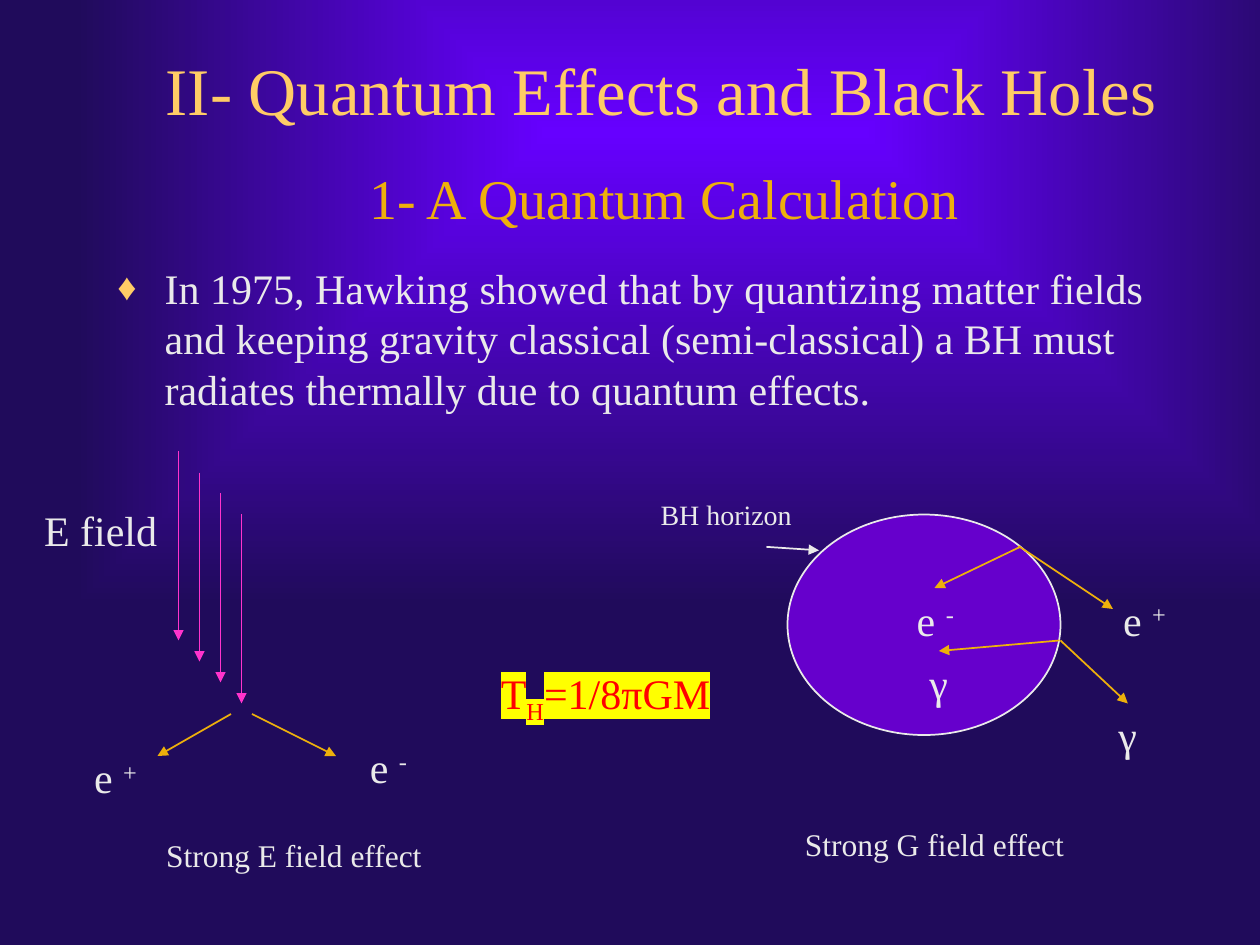
from pptx import Presentation
from pptx.dml.color import RGBColor as Rgb
from pptx.enum.shapes import MSO_CONNECTOR as Connector, MSO_SHAPE as Preset
from pptx.enum.text import MSO_ANCHOR as Anchor, MSO_AUTO_SIZE as AutoSize, PP_ALIGN as Align
from pptx.oxml import parse_xml
from pptx.oxml.ns import nsdecls
from pptx.util import Pt

THEME = {
    "font": "Times New Roman",
    "text": "EAEAEA", "title": "FFCC66", "accent": "EEB00B", "field": "FF33CC",
    "hole": "6600CC", "formula": "FF0000", "marker": "FFFF00",
    "glow": "6600FF", "night": "200B5B",
    "title_size": 38, "subtitle_size": 32, "body_size": 24, "caption_size": 18, "note_size": 16,
}

TITLE = "II- Quantum Effects and Black Holes"
SUBTITLE = "1- A Quantum Calculation"
STATEMENT = ("In 1975, Hawking showed that by quantizing matter fields and keeping gravity "
             "classical (semi-classical) a BH must radiates thermally due to quantum effects.")
TITLE_BOX = (54, 18, 648, 66)
BODY_BOX = (60, 90, 612, 126)
BODY_INDENT = 27

ELECTRON = [("e ", 0), ("-", 30)]
POSITRON = [("e ", 0), ("+", 30)]
PHOTON = [("γ", 0)]
FORMULA = [("T", 0), ("H", -25), ("=1/8πGM", 0)]

HORIZON_LABEL = ([("BH horizon", 0)], (358, 281, 114, 27), "note_size", True)
LABELS = [
    (ELECTRON, (516, 336, 37, 36), "body_size", False),
    (POSITRON, (634, 336, 40, 36), "body_size", False),
    (PHOTON, (632, 402, 24.5, 36), "body_size", False),
    (PHOTON, (524, 372, 24.5, 36), "body_size", False),
    ([("E field", 0)], (18, 285, 79, 36), "body_size", False),
    (ELECTRON, (198, 420, 48, 36), "body_size", True),
    (POSITRON, (42, 426, 48, 36), "body_size", True),
    ([("Strong G field effect", 0)], (432, 468, 204, 29), "caption_size", True),
    ([("Strong E field effect", 0)], (66, 474, 204, 29), "caption_size", True),
]
FORMULA_BOX = (272, 378, 148, 36)

HOLE_BOX = (450, 294, 156, 126)
HORIZON_POINTER = (438, 312.5, 468, 314.5)
PARTICLE_PATHS = [
    (583, 312.5, 534, 336), (582, 312, 636, 348),
    (606, 366, 644.5, 402), (605.5, 366, 536.5, 372),
    (144, 408, 192, 432), (132, 408, 90, 432),
]
FIELD_START, FIELD_STEP, FIELD_LENGTH, FIELD_COUNT = (102, 258), 12, 108, 4


def color(name):
    return Rgb.from_string(THEME[name])


def points(values):
    return [Pt(value) for value in values]


def style(span, size, tint):
    span.font.name = THEME["font"]
    span.font.size = Pt(THEME[size])
    span.font.color.rgb = color(tint)


def paint_background(page):
    stops = "".join(
        f'<a:gs pos="{place}"><a:srgbClr val="{THEME[name]}"/></a:gs>'
        for place, name in ((0, "glow"), (100000, "night")))
    page._element.cSld.insert(0, parse_xml(
        f'<p:bg {nsdecls("p", "a")}><p:bgPr><a:gradFill rotWithShape="0"><a:gsLst>{stops}</a:gsLst>'
        '<a:path path="shape"><a:fillToRect l="14000" t="6000" r="1000" b="78000"/></a:path>'
        '</a:gradFill><a:effectLst/></p:bgPr></p:bg>'))


def add_box(page, place):
    box = page.shapes.add_textbox(*points(place))
    box.text_frame.word_wrap = True
    return box


def add_label(page, pieces, place, size, wraps, tint="text"):
    frame = add_box(page, place).text_frame
    frame.word_wrap = wraps
    frame.auto_size = AutoSize.SHAPE_TO_FIT_TEXT
    para = frame.paragraphs[0]
    para.alignment = Align.CENTER
    for text, baseline in pieces:
        span = para.add_run()
        span.text = text
        style(span, size, tint)
        if baseline:
            span._r.get_or_add_rPr().set("baseline", str(baseline * 1000))
    return para


def add_heading(page):
    frame = add_box(page, TITLE_BOX).text_frame
    frame.text = TITLE
    frame.vertical_anchor = Anchor.MIDDLE
    frame.paragraphs[0].alignment = Align.CENTER
    style(frame.paragraphs[0].runs[0], "title_size", "title")


def add_body(page):
    frame = add_box(page, BODY_BOX).text_frame
    frame.text = SUBTITLE + "\n" + STATEMENT
    subtitle, statement = frame.paragraphs
    subtitle.alignment = Align.CENTER
    subtitle.space_before = Pt(4)
    statement.space_before = Pt(18)
    style(subtitle.runs[0], "subtitle_size", "accent")
    style(statement.runs[0], "body_size", "text")
    indent = str(Pt(BODY_INDENT))
    subtitle._p.get_or_add_pPr().set("marL", indent)
    props = statement._p.get_or_add_pPr()
    props.set("marL", indent)
    props.set("indent", "-" + indent)
    for bullet in (f'<a:buClr {nsdecls("a")}><a:srgbClr val="{THEME["title"]}"/></a:buClr>',
                   f'<a:buSzPct {nsdecls("a")} val="90000"/>',
                   f'<a:buFont {nsdecls("a")} typeface="{THEME["font"]}"/>',
                   f'<a:buChar {nsdecls("a")} char="♦"/>'):
        props.append(parse_xml(bullet))


def add_arrow(page, path, tint):
    arrow = page.shapes.add_connector(Connector.STRAIGHT, *points(path))
    arrow.line.color.rgb = color(tint)
    arrow.line.width = Pt(1)
    arrow.line._get_or_add_ln().append(parse_xml(f'<a:tailEnd {nsdecls("a")} type="triangle"/>'))
    arrow._element.spPr.append(parse_xml(f'<a:effectLst {nsdecls("a")}/>'))


def add_hole(page):
    hole = page.shapes.add_shape(Preset.OVAL, *points(HOLE_BOX))
    hole.shadow.inherit = False
    hole.fill.solid()
    hole.fill.fore_color.rgb = color("hole")
    hole.line.color.rgb = color("text")
    hole.line.width = Pt(1)


def add_formula(page):
    para = add_label(page, FORMULA, FORMULA_BOX, "body_size", True, "formula")
    for span in para.runs:
        span._r.rPr.find("{*}solidFill").addnext(parse_xml(
            f'<a:highlight {nsdecls("a")}><a:srgbClr val="{THEME["marker"]}"/></a:highlight>'))


def main():
    deck = Presentation()
    deck.slide_width, deck.slide_height = Pt(720), Pt(540)
    page = deck.slides.add_slide(deck.slide_layouts[6])
    paint_background(page)
    add_body(page)
    add_heading(page)
    add_arrow(page, HORIZON_POINTER, "text")
    add_label(page, *HORIZON_LABEL)
    add_hole(page)
    for path in PARTICLE_PATHS:
        add_arrow(page, path, "accent")
    for index in range(FIELD_COUNT):
        x, y = (start + index * FIELD_STEP for start in FIELD_START)
        add_arrow(page, (x, y, x, y + FIELD_LENGTH), "field")
    for label in LABELS:
        add_label(page, *label)
    add_formula(page)
    deck.save("out.pptx")


if __name__ == "__main__":
    main()
